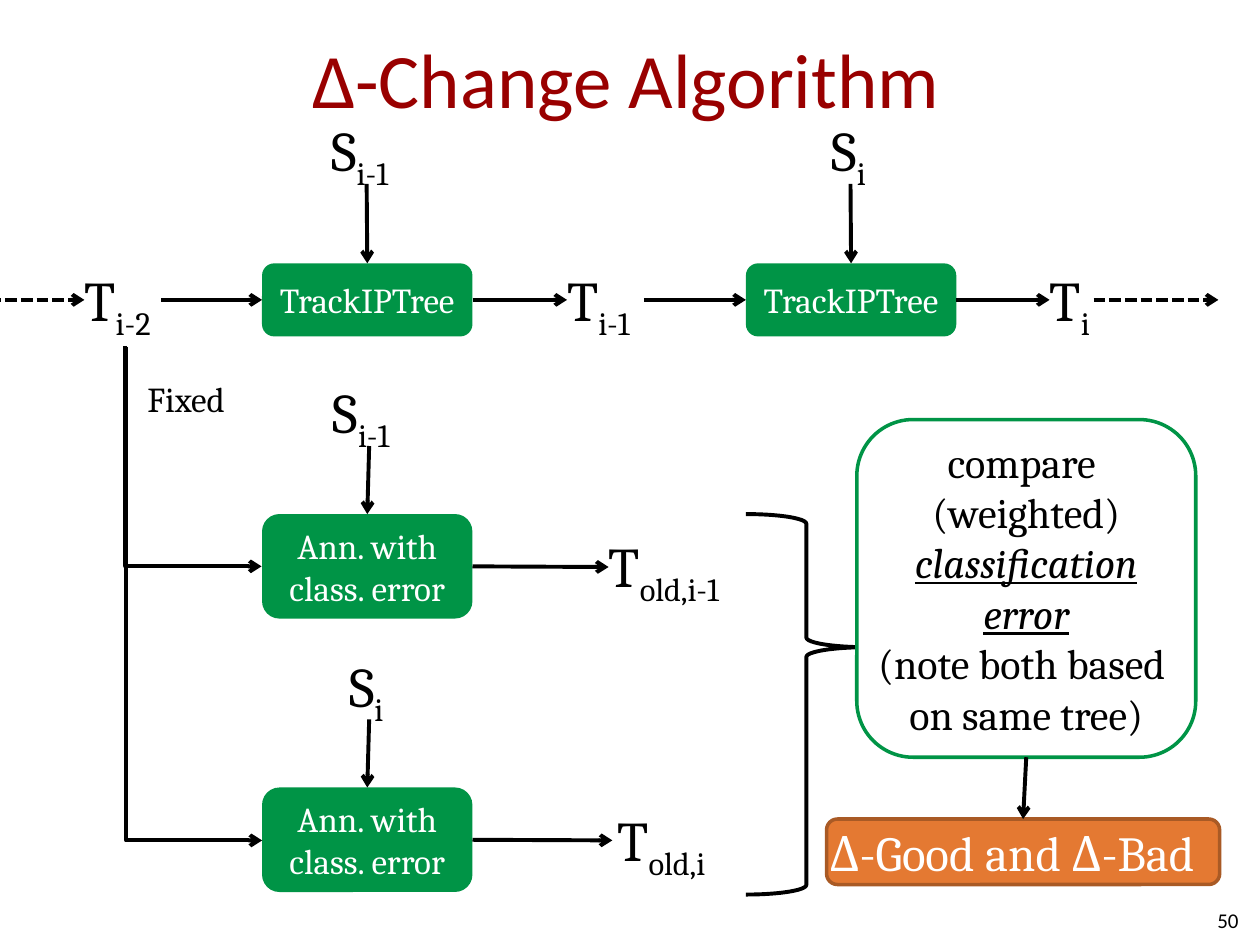
from lxml.etree import SubElement
from pptx import Presentation
from pptx.dml.color import RGBColor
from pptx.enum.dml import MSO_LINE
from pptx.enum.shapes import MSO_CONNECTOR, MSO_SHAPE
from pptx.enum.text import MSO_ANCHOR, PP_ALIGN
from pptx.oxml.ns import qn
from pptx.util import Emu, Pt

BLACK = RGBColor(0x00, 0x00, 0x00)
WHITE = RGBColor(0xFF, 0xFF, 0xFF)
GREEN = RGBColor(0x00, 0x94, 0x46)
ORANGE = RGBColor(0xE4, 0x79, 0x32)
BROWN = RGBColor(0xA9, 0x5A, 0x25)
RED = RGBColor(0x99, 0x00, 0x00)

TOP, LEFT, BOTTOM, RIGHT = range(4)
TREE_Y = 238
BOX_X, BOX_W = 208, 167


def px(n):
    return Emu(n * 9144)


def set_frame(sp, anchor, wrap=True):
    tf = sp.text_frame
    tf.margin_left = tf.margin_top = tf.margin_right = tf.margin_bottom = 0
    tf.vertical_anchor = anchor
    tf.word_wrap = wrap
    return tf.paragraphs[0]


def set_font(p, size, color=BLACK, name="Cambria", align=PP_ALIGN.LEFT):
    p.alignment = align
    p.font.size = Pt(size)
    p.font.name = name
    p.font.color.rgb = color


def add_label(s, x, y, w, h, text, size, color=BLACK, name="Cambria",
              align=PP_ALIGN.LEFT, anchor=MSO_ANCHOR.TOP, wrap=False):
    sp = s.shapes.add_textbox(px(x), px(y), px(w), px(h))
    p = set_frame(sp, anchor, wrap)
    set_font(p, size, color, name, align)
    p.add_run().text = text
    return p


def add_symbol(s, x, y, w, letter, index):
    p = add_label(s, x, y, w, 54, letter, 32)
    r = p.add_run()
    r.text = index
    r._r.get_or_add_rPr().set("baseline", "-25000")


def add_box(s, x, y, w, h, fill, line=None, kind=MSO_SHAPE.ROUNDED_RECTANGLE):
    sp = s.shapes.add_shape(kind, px(x), px(y), px(w), px(h))
    sp.shadow.inherit = False
    if fill is None:
        sp.fill.background()
    else:
        sp.fill.solid()
        sp.fill.fore_color.rgb = fill
    if line is None:
        sp.line.fill.background()
    else:
        sp.line.color.rgb = line
        sp.line.width = Pt(2)
    return sp


def add_step(s, x, y, h, text):
    sp = add_box(s, x, y, BOX_W, h, GREEN)
    p = set_frame(sp, MSO_ANCHOR.MIDDLE)
    set_font(p, 20, WHITE, align=PP_ALIGN.CENTER)
    p.add_run().text = text
    return sp


def style_arrow(c):
    c.line.color.rgb = BLACK
    c.line.width = Pt(2.25)
    SubElement(c.line._get_or_add_ln(), qn("a:tailEnd"), type="arrow")
    SubElement(c._element.spPr, qn("a:effectLst"))


def add_arrow(s, x1, y1, x2, y2, begin=None, end=None, dashed=False):
    c = s.shapes.add_connector(MSO_CONNECTOR.STRAIGHT, px(x1), px(y1), px(x2), px(y2))
    if begin:
        c.begin_connect(*begin)
    if end:
        c.end_connect(*end)
    if dashed:
        c.line.dash_style = MSO_LINE.SQUARE_DOT
    style_arrow(c)


def add_down_right_arrow(s, x1, y1, x2, y2):
    cx, cy = (x1 + x2) / 2, (y1 + y2) / 2
    a, b = (y2 - y1) / 2, (x2 - x1) / 2
    corners = [px(int(n)) for n in (cx + a, cy - b, cx - a, cy + b)]
    c = s.shapes.add_connector(MSO_CONNECTOR.ELBOW, *corners)
    spPr = c._element.spPr
    spPr.find(qn("a:xfrm")).set("rot", "16200000")
    spPr.find(qn("a:prstGeom")).set("prst", "bentConnector2")
    style_arrow(c)


def add_tracking_row(s):
    add_arrow(s, -58, TREE_Y, 67, TREE_Y, dashed=True)
    add_symbol(s, 67, 211, 61, "T", "i-2")
    steps = [
        (BOX_X, 128, 450, (263, 57, "i-1"), (61, "i-1")),
        (592, 511, 833, (660, 31, "i"), (35, "i")),
    ]
    for x, start, stop, (source_x, source_w, source), (tree_w, tree) in steps:
        step = add_step(s, x, 209, 58, "TrackIPTree")
        add_symbol(s, source_x, 92, source_w, "S", source)
        add_symbol(s, stop, 211, tree_w, "T", tree)
        middle = x + BOX_W // 2
        add_arrow(s, middle, 146, middle, 209, end=(step, TOP))
        add_arrow(s, start, TREE_Y, x, TREE_Y, end=(step, LEFT))
        add_arrow(s, x + BOX_W, TREE_Y, stop, TREE_Y, begin=(step, RIGHT))
    add_arrow(s, 868, TREE_Y, 967, TREE_Y, dashed=True)


def add_annotation_row(s, y, source, source_x, source_w, old, old_x, old_w, stop):
    middle = y + 42
    step = add_step(s, BOX_X, y, 83, "Ann. with class. error")
    add_down_right_arrow(s, 100, 275, BOX_X, middle)
    add_symbol(s, source_x, y - 108, source_w, "S", source)
    add_arrow(s, 293, y - 54, 292, y, end=(step, TOP))
    add_arrow(s, BOX_X + BOX_W, middle, stop, middle, begin=(step, RIGHT))
    add_symbol(s, old_x, middle - 28, old_w, "T", old)


def add_comparison(s):
    brace = add_box(s, 592, 408, 96, 302, None, BLACK, MSO_SHAPE.RIGHT_BRACE)
    brace.line.width = Pt(2.25)
    brace.adjustments[0] = 0.08
    brace.adjustments[1] = 0.35

    compare = add_box(s, 680, 333, 269, 268, WHITE, GREEN)
    p = set_frame(compare, MSO_ANCHOR.TOP)
    set_font(p, 24, align=PP_ALIGN.CENTER)
    lines = [
        ("compare ", False), ("(weighted)", False),
        ("classification", True), ("error", True),
        ("(note both based ", False), ("on same tree)", False),
    ]
    for i, (text, stressed) in enumerate(lines):
        if i:
            p.add_line_break()
        r = p.add_run()
        r.text = text
        if stressed:
            r.font.italic = r.font.underline = True

    verdict = add_box(s, 656, 650, 312, 52, ORANGE, BROWN)
    p = set_frame(verdict, MSO_ANCHOR.TOP)
    set_font(p, 28, WHITE)
    p.add_run().text = "Δ-Good and Δ-Bad"
    add_arrow(s, 814, 601, 812, 650, (compare, BOTTOM), (verdict, TOP))


def main():
    prs = Presentation()
    prs.slide_width, prs.slide_height = px(1000), px(750)
    s = prs.slides.add_slide(prs.slide_layouts[6])
    add_label(s, 248, 25, 504, 74, "Δ-Change Algorithm", 44, RED, "Calibri")
    add_tracking_row(s)
    add_label(s, 117, 300, 66, 34, "Fixed", 20)
    add_annotation_row(s, 408, "i-1", 264, 57, "old,i-1", 483, 108, 483)
    add_annotation_row(s, 625, "i", 277, 31, "old,i", 490, 82, 486)
    add_comparison(s)
    add_label(s, 750, 710, 233, 40, "50", 12, name="Calibri",
              align=PP_ALIGN.RIGHT, anchor=MSO_ANCHOR.MIDDLE, wrap=True)
    prs.save("out.pptx")


if __name__ == "__main__":
    main()
